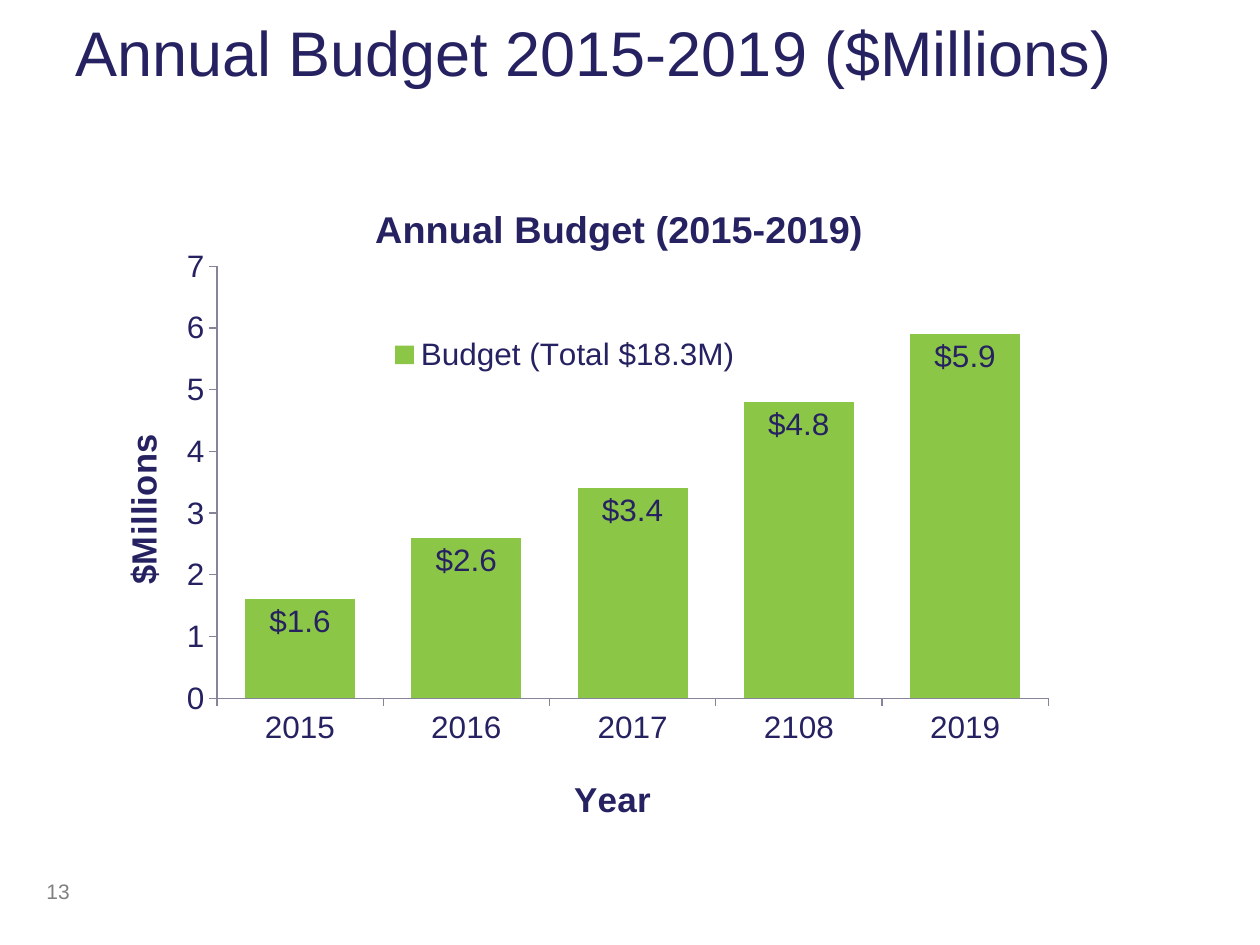
from lxml import etree
from pptx import Presentation
from pptx.chart.data import CategoryChartData
from pptx.dml.color import RGBColor
from pptx.enum.chart import XL_CHART_TYPE as ChartType
from pptx.enum.chart import XL_LABEL_POSITION as LabelPosition
from pptx.enum.chart import XL_LEGEND_POSITION as LegendPosition
from pptx.enum.chart import XL_TICK_MARK as TickMark
from pptx.enum.text import MSO_ANCHOR as Anchor
from pptx.oxml.ns import qn
from pptx.util import Inches, Pt

THEME = {
    "font": "Arial",
    "navy": RGBColor(0x26, 0x22, 0x62),
    "green": RGBColor(0x8C, 0xC6, 0x46),
    "grey": RGBColor(0x80, 0x80, 0x80),
    "axis": RGBColor(0x86, 0x84, 0x98),
    "heading": Pt(36),
    "chart_title": Pt(21.6),
    "axis_title": Pt(20),
    "chart_text": Pt(18),
    "number": Pt(12),
}


def style_font(font, size, color="navy", bold=False):
    formats = {"name": THEME["font"], "size": THEME[size], "bold": bold}
    for attribute, value in formats.items():
        setattr(font, attribute, value)
    font.color.rgb = THEME[color]


def place(element, after, **position):
    """Give a chart part a manual layout, in fractions of the chart."""
    for old in element.findall(qn("c:layout")):
        element.remove(old)
    layout = etree.Element(qn("c:layout"))
    manual = etree.SubElement(layout, qn("c:manualLayout"))
    if after is None:
        etree.SubElement(manual, qn("c:layoutTarget")).set("val", "inner")
        element.insert(0, layout)
    else:
        element.find(qn(after)).addnext(layout)
    for axis in ("x", "y"):
        etree.SubElement(manual, qn(f"c:{axis}Mode")).set("val", "edge")
    for key, value in position.items():
        etree.SubElement(manual, qn(f"c:{key}")).set("val", str(value))


presentation = Presentation()
presentation.slide_width = Inches(10)
presentation.slide_height = Inches(7.5)
slide = presentation.slides.add_slide(presentation.slide_layouts[6])

# Heading and page number
for text, box, size, color, anchor, right_inset in (
    ("Annual Budget 2015-2019 ($Millions)", (0.5, 0, 9.16, 0.82),
     "heading", "navy", Anchor.MIDDLE, 0),
    ("13", (0.27, 6.92, 2.08, 0.33), "number", "grey", Anchor.TOP, 0.1),
):
    frame = slide.shapes.add_textbox(*map(Inches, box)).text_frame
    frame.word_wrap = True
    frame.vertical_anchor = anchor
    frame.margin_right = Inches(right_inset)
    run = frame.paragraphs[0].add_run()
    run.text = text
    style_font(run.font, size, color)

# Budget chart
budget = CategoryChartData()
budget.categories = ["2015", "2016", "2017", "2108", "2019"]
budget.add_series("Budget (Total $18.3M)", (1.6, 2.6, 3.4, 4.8, 5.9))
chart = slide.shapes.add_chart(
    ChartType.COLUMN_CLUSTERED,
    Inches(0.71), Inches(1.38), Inches(8.29), Inches(5.21), budget,
).chart
style_font(chart.font, "chart_text")
place(chart.plots[0]._element.getparent(), None, x=0.122, y=0.143, w=0.796, h=0.668)

# Columns and value labels
columns = chart.plots[0]
columns.gap_width = 51
columns.vary_by_categories = False
fill = columns.series[0].format.fill
fill.solid()
fill.fore_color.rgb = THEME["green"]
columns.has_data_labels = True
labels = columns.data_labels
label_formats = {
    "show_value": True,
    "number_format": '"$"#,##0.0',
    "number_format_is_linked": False,
    "position": LabelPosition.INSIDE_END,
}
for attribute, value in label_formats.items():
    setattr(labels, attribute, value)
style_font(labels.font, "chart_text")

# Axes
years, millions = chart.category_axis, chart.value_axis
scale = {
    "minimum_scale": 0,
    "maximum_scale": 7,
    "major_unit": 1,
    "has_major_gridlines": False,
}
for attribute, value in scale.items():
    setattr(millions, attribute, value)
for axis in (years, millions):
    axis.major_tick_mark = TickMark.OUTSIDE
    axis.format.line.color.rgb = THEME["axis"]
    axis.format.line.width = Pt(0.75)
    style_font(axis.tick_labels.font, "chart_text")

# Chart and axis titles
for owner, text, size, x, y in (
    (chart, "Annual Budget (2015-2019)", "chart_title", 0.267, 0.039),
    (years, "Year", "axis_title", 0.458, 0.923),
    (millions, "$Millions", "axis_title", 0.024, 0.395),
):
    title = owner.chart_title if owner is chart else owner.axis_title
    run = title.text_frame.paragraphs[0].add_run()
    run.text = text
    style_font(run.font, size, bold=True)
    place(title._element, "c:tx", x=x, y=y)

# Legend
chart.has_legend = True
legend = chart.legend
legend.position = LegendPosition.TOP
legend.include_in_layout = False
style_font(legend.font, "chart_text")
place(legend._element, "c:legendPos", x=0.28, y=0.24, w=0.35, h=0.08)

presentation.save("out.pptx")
